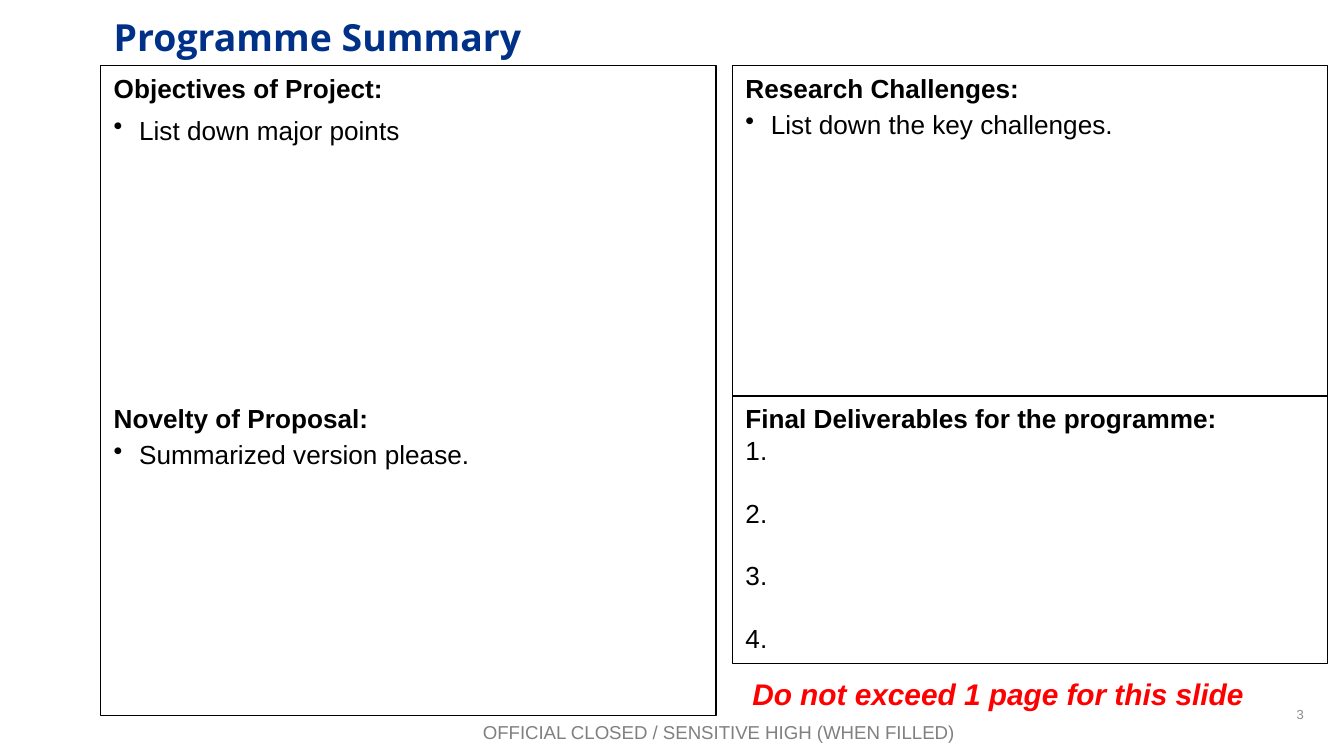
import pptx
import pptx.dml.color
import pptx.enum.shapes
import pptx.enum.text
import pptx.oxml.ns
import pptx.util
from lxml import etree

Cm = pptx.util.Cm
Pt = pptx.util.Pt
ALIGN = pptx.enum.text.PP_ALIGN
ANCHOR = pptx.enum.text.MSO_ANCHOR


def color(value):
    return pptx.dml.color.RGBColor.from_string(value)


def write(paragraph, text, size=14, name="Arial", fill="000000", bold=False,
          italic=False, align=ALIGN.LEFT, before=0, bullet=False):
    paragraph.alignment = align
    if before:
        paragraph.space_before = Pt(before)
    if bullet:
        properties = paragraph._p.get_or_add_pPr()
        properties.set("marL", str(Cm(0.48)))
        properties.set("indent", str(Cm(-0.48)))
        mark = etree.SubElement(properties, pptx.oxml.ns.qn("a:buChar"))
        mark.set("char", "•")
    run = paragraph.add_run()
    run.text = text
    run.font.size = Pt(size)
    run.font.name = name
    run.font.color.rgb = color(fill)
    run.font.bold = bold
    run.font.italic = italic


class SlideBuilder:
    ink = "000000"
    border = 0.75

    def __init__(self, slide):
        self.slide = slide

    def label(self, text, left, top, width, height, wrap=True,
              anchor=ANCHOR.TOP, **style):
        shape = self.slide.shapes.add_textbox(
            Cm(left), Cm(top), Cm(width), Cm(height))
        shape.text_frame.word_wrap = wrap
        shape.text_frame.vertical_anchor = anchor
        write(shape.text_frame.paragraphs[0], text, **style)

    def panel(self, left, top, width, height, lines):
        shape = self.slide.shapes.add_shape(
            pptx.enum.shapes.MSO_SHAPE.RECTANGLE,
            Cm(left), Cm(top), Cm(width), Cm(height))
        shape.shadow.inherit = False
        shape.fill.background()
        shape.line.color.rgb = color(self.ink)
        shape.line.width = Pt(self.border)
        frame = shape.text_frame
        frame.word_wrap = True
        frame.vertical_anchor = ANCHOR.TOP
        for index, (text, style) in enumerate(lines):
            paragraph = frame.add_paragraph() if index else frame.paragraphs[0]
            write(paragraph, text, fill=self.ink, **style)


def main():
    presentation = pptx.Presentation()
    presentation.slide_width = Cm(25.4)
    presentation.slide_height = Cm(14.29)
    builder = SlideBuilder(
        presentation.slides.add_slide(presentation.slide_layouts[6]))

    builder.label("3", 18.97, 13.13, 5.92, 0.76, anchor=ANCHOR.MIDDLE,
                  size=7, fill="8C8C8C", align=ALIGN.RIGHT)
    builder.label("OFFICIAL CLOSED / SENSITIVE HIGH (WHEN FILLED)",
                  1.73, 13.51, 23.7, 0.69,
                  size=10, fill="808080", align=ALIGN.CENTER)
    builder.label("Programme Summary", 1.9, 0.15, 22, 2.01,
                  size=20, name="Open Sans", fill="003087", bold=True)

    top, right, right_width, challenges_height = 1.24, 13.84, 11.25, 6.25
    heading = {"bold": True}
    point = {"bullet": True, "before": 2.8}
    builder.panel(1.9, top, 11.63, 12.29, [
        ("Objectives of Project:", heading),
        ("List down major points", {"bullet": True, "before": 5.6}),
        ("Novelty of Proposal:", {"bold": True, "before": 137.5}),
        ("Summarized version please.", point),
    ])
    builder.panel(right, top, right_width, challenges_height, [
        ("Research Challenges:", heading),
        ("List down the key challenges.", point),
    ])
    numbers = [(f"{number}.", {"before": 16.8 if number > 1 else 0})
               for number in range(1, 5)]
    builder.panel(right, top + challenges_height, right_width, 5.05, [
        ("Final Deliverables for the programme:", heading), *numbers])

    builder.label("Do not exceed 1 page for this slide",
                  13.97, 12.65, 9.93, 0.94, wrap=False,
                  size=16, fill="FF0000", bold=True, italic=True)
    presentation.save("out.pptx")


if __name__ == "__main__":
    main()
